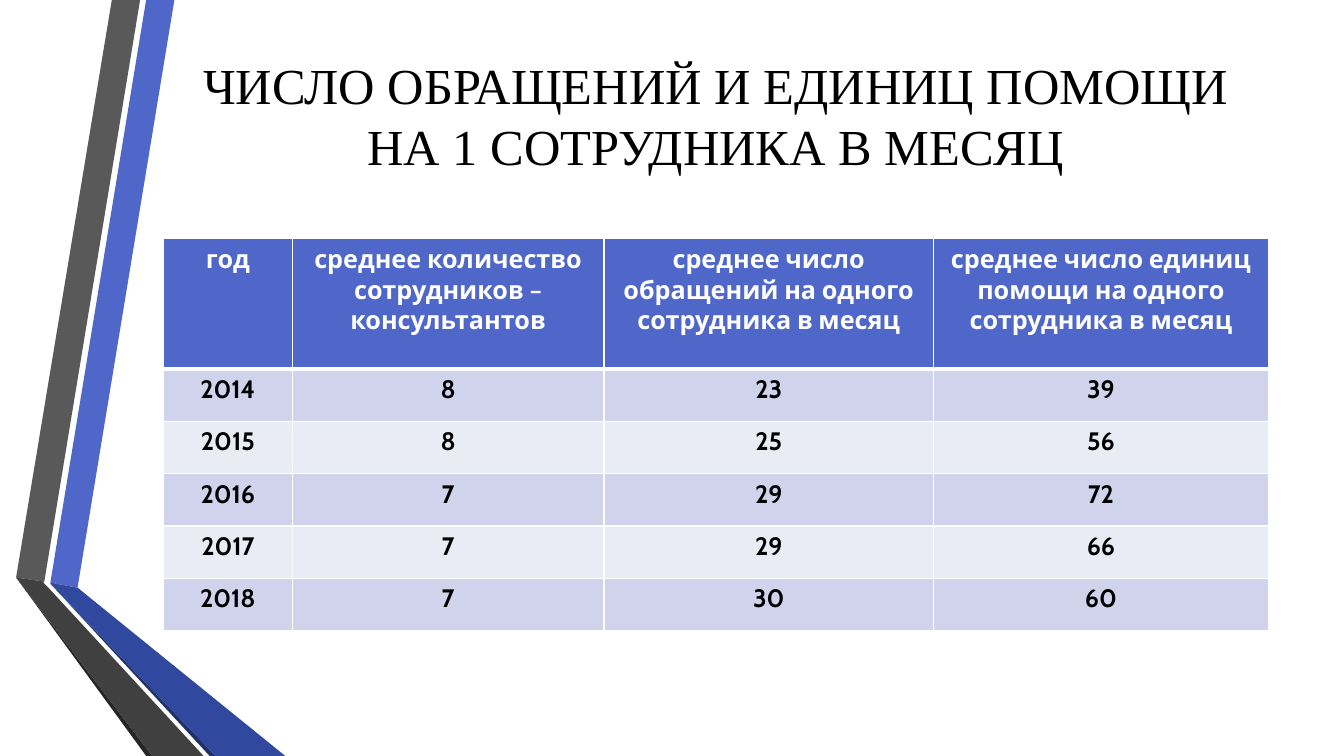
from lxml.etree import SubElement
from pptx import Presentation
from pptx.dml.color import RGBColor
from pptx.enum.text import MSO_ANCHOR, MSO_AUTO_SIZE, PP_ALIGN
from pptx.oxml.ns import qn
from pptx.util import Inches, Pt

COLORS = {
    "blue": "4E67C8", "blue_fold": "31489F", "blue_edge": "21306A",
    "gray": "595959", "gray_fold": "404040", "gray_edge": "262626",
    "band_dark": "D0D3EB", "band_light": "E9EBF5",
    "white": "FFFFFF", "black": "000000",
}
RIBBONS = [
    ("blue", [(0.5, 5.78), (0.77, 5.83), (1.73, 0), (1.45, 0)]),
    ("gray", [(1.39, 0), (1.11, 0), (0.16, 5.73), (0.44, 5.77)]),
    ("gray_edge", [(0.16, 5.73), (1.45, 7.5), (1.51, 7.5)]),
    ("blue_edge", [(0.5, 5.79), (2.08, 7.5), (2.14, 7.5)]),
    ("blue_fold", [(0.5, 5.79), (2.14, 7.5), (2.83, 7.5), (0.77, 5.83), (0.5, 5.78)]),
    ("gray_fold", [(2.02, 7.5), (0.48, 5.83), (0.43, 5.78), (0.44, 5.77),
                   (0.16, 5.73), (1.51, 7.5)]),
]
ROWS = [
    ("год", "среднее количество сотрудников – консультантов",
     "среднее число обращений на одного сотрудника в месяц",
     "среднее число единиц помощи на одного сотрудника в месяц"),
    ("2014", "8", "23", "39"),
    ("2015", "8", "25", "56"),
    ("2016", "7", "29", "72"),
    ("2017", "7", "29", "66"),
    ("2018", "7", "30", "60"),
]
COLUMN_WIDTHS = [1.28, 3.09, 3.27, 3.32]
HEADER_HEIGHT, ROW_HEIGHT = 1.29, 0.52
LEFT, WIDTH = 1.62, 10.96


def add_centered_run(paragraph, text, font_name, size, color):
    paragraph.alignment = PP_ALIGN.CENTER
    run = paragraph.add_run()
    run.text = text
    run.font.name = font_name
    run.font.size = Pt(size)
    run.font.color.rgb = RGBColor.from_string(COLORS[color])
    return run


def add_border(cell, side, width):
    line = SubElement(cell._tc.get_or_add_tcPr(), qn(f"a:ln{side}"), w=str(Pt(width)))
    fill = SubElement(line, qn("a:solidFill"))
    SubElement(fill, qn("a:srgbClr"), val=COLORS["white"])


presentation = Presentation()
presentation.slide_width = Inches(13.33)
presentation.slide_height = Inches(7.5)
slide = presentation.slides.add_slide(presentation.slide_layouts[5])

# Folded ribbons on the left
for color, points in RIBBONS:
    start, *others = [(Inches(x), Inches(y)) for x, y in points]
    builder = slide.shapes.build_freeform(*start)
    builder.add_line_segments(others, close=True)
    ribbon = builder.convert_to_shape()
    ribbon.shadow.inherit = False
    ribbon.fill.solid()
    ribbon.fill.fore_color.rgb = RGBColor.from_string(COLORS[color])
    ribbon.line.fill.background()

# Title
title = slide.shapes.title
title.left, title.top = Inches(LEFT), Inches(0.75)
title.width, title.height = Inches(WIDTH), Inches(0.78)
title.text_frame.word_wrap = True
title.text_frame.auto_size = MSO_AUTO_SIZE.NONE
title.text_frame.vertical_anchor = MSO_ANCHOR.MIDDLE
add_centered_run(title.text_frame.paragraphs[0],
                 "ЧИСЛО ОБРАЩЕНИЙ И ЕДИНИЦ ПОМОЩИ НА 1 СОТРУДНИКА В МЕСЯЦ",
                 "Times New Roman", 36, "black")

# Table
table_height = HEADER_HEIGHT + ROW_HEIGHT * (len(ROWS) - 1)
table = slide.shapes.add_table(len(ROWS), len(COLUMN_WIDTHS), Inches(LEFT), Inches(2.37),
                               Inches(WIDTH), Inches(table_height)).table
for column, width in zip(table.columns, COLUMN_WIDTHS):
    column.width = Inches(width)

for row_index, values in enumerate(ROWS):
    is_header = row_index == 0
    table.rows[row_index].height = Inches(HEADER_HEIGHT if is_header else ROW_HEIGHT)
    if is_header:
        fill_color = "blue"
    else:
        fill_color = "band_dark" if row_index % 2 else "band_light"
    for column_index, value in enumerate(values):
        cell = table.cell(row_index, column_index)
        run = add_centered_run(cell.text_frame.paragraphs[0], value, "Cabin", 18,
                               "white" if is_header else "black")
        run.font.bold = True
        add_border(cell, "L", 1)
        add_border(cell, "R", 1)
        add_border(cell, "T", 3 if row_index == 1 else 1)
        add_border(cell, "B", 3 if is_header else 1)
        cell.fill.solid()
        cell.fill.fore_color.rgb = RGBColor.from_string(COLORS[fill_color])

presentation.save("out.pptx")
